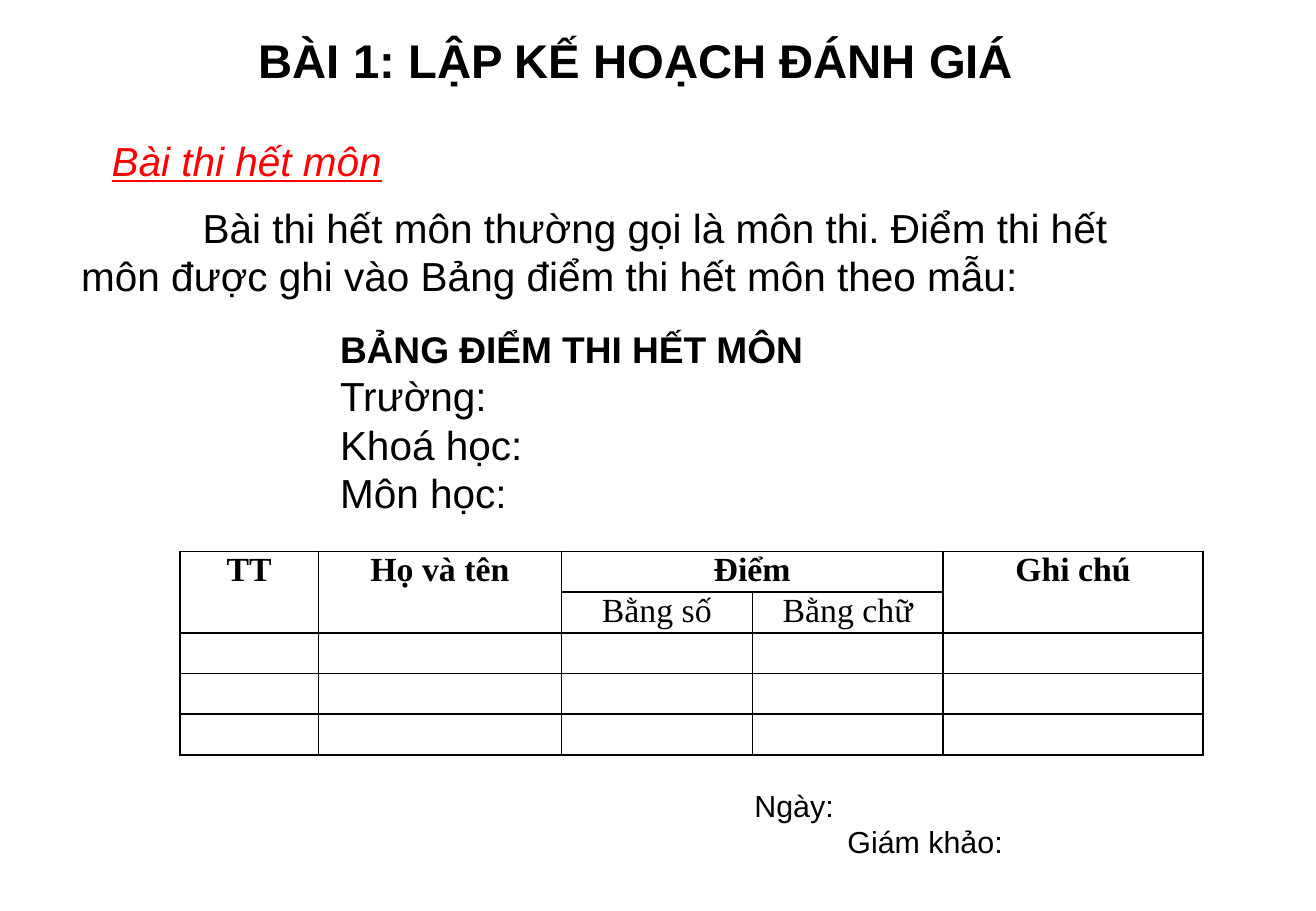
import pptx
import pptx.util
import pptx.dml.color
import pptx.enum.text
import pptx.oxml
import pptx.oxml.ns

BLACK = pptx.dml.color.RGBColor(0, 0, 0)
RED = pptx.dml.color.RGBColor(255, 0, 0)
LEFT = pptx.enum.text.PP_ALIGN.LEFT
MID = pptx.enum.text.PP_ALIGN.CENTER
TOP = pptx.enum.text.MSO_ANCHOR.TOP
Pt = pptx.util.Pt

deck = pptx.Presentation()
deck.slide_width = pptx.util.Inches(10.83)
deck.slide_height = pptx.util.Inches(7.5)
COL = deck.slide_width / 100
ROW = deck.slide_height / 100


def area(x, y, wide, high):
    """Turn hundredths of the slide into left, top, width and height."""
    return int(x * COL), int(y * ROW), int(wide * COL), int(high * ROW)


def write(frame, text, size=24, face="Arial", color=BLACK, bold=False,
          italic=False, under=False, align=LEFT, first=0, more=False):
    """Fill the frame, or add to it if more; first is the indent in columns."""
    frame.word_wrap = True
    para = frame.add_paragraph() if more else frame.paragraphs[0]
    para.alignment = align
    if first:
        para._p.get_or_add_pPr().set("indent", str(int(first * COL)))
    run = para.add_run()
    run.text = text
    font = run.font
    font.size, font.name, font.color.rgb = Pt(size), face, color
    font.bold, font.italic, font.underline = bold, italic, under


slide = deck.slides.add_slide(deck.slide_layouts[5])
shapes = slide.shapes

# Title
title = shapes.title
title.left, title.top, title.width, title.height = area(18.74, 2.8, 62, 7.6)
title.text_frame.vertical_anchor = TOP
write(title.text_frame, "BÀI 1: LẬP KẾ HOẠCH ĐÁNH GIÁ", size=28, bold=True)

# Topic and introduction
topic = shapes.add_textbox(*area(7.57, 14.27, 25, 6.67)).text_frame
write(topic, "Bài thi hết môn", color=RED, italic=True, under=True)

intro = shapes.add_textbox(*area(5.26, 21.6, 85.78, 12)).text_frame
write(intro, "Bài thi hết môn thường gọi là môn thi. Điểm thi hết "
      "môn được ghi vào Bảng điểm thi hết môn theo mẫu:", first=9.23)

# Form heading
form = shapes.add_textbox(*area(24.93, 35.2, 50.05, 22.93)).text_frame
write(form, "BẢNG ĐIỂM THI HẾT MÔN", size=22, bold=True)
for label in ("Trường:", "Khoá học:", "Môn học:"):
    write(form, label, more=True)

# Score table
WIDTHS = (10.53, 18.47, 14.5, 14.5, 19.76)
LINES, HIGH = 5, 4.47
table = shapes.add_table(LINES, len(WIDTHS), *area(
    13.67, 60.53, sum(WIDTHS), LINES * HIGH)).table
table.first_row = table.horz_banding = False
for column, wide in zip(table.columns, WIDTHS):
    column.width = int(wide * COL)
for row in table.rows:
    row.height = int(HIGH * ROW)

for cell in table.iter_cells():
    cell.margin_left = cell.margin_right = pptx.util.Inches(0.07)
    cell.margin_top = cell.margin_bottom = 0
    for side in ("lnL", "lnR", "lnT", "lnB"):
        cell._tc.get_or_add_tcPr().append(pptx.oxml.parse_xml(
            f'<a:{side} {pptx.oxml.ns.nsdecls("a")} w="{Pt(1)}"><a:solidFill>'
            f'<a:srgbClr val="{BLACK}"/></a:solidFill></a:{side}>'))
    cell.fill.background()

for top, left, end_row, end_col in ((0, 0, 1, 0), (0, 1, 1, 1),
                                    (0, 2, 0, 3), (0, 4, 1, 4)):
    table.cell(top, left).merge(table.cell(end_row, end_col))

HEADS = ((0, 0, "TT"), (0, 1, "Họ và tên"), (0, 2, "Điểm"),
         (0, 4, "Ghi chú"), (1, 2, "Bằng số"), (1, 3, "Bằng chữ"))
for line, place, head in HEADS:
    write(table.cell(line, place).text_frame, head, size=20,
          face="Times New Roman", bold=line == 0, align=MID)

# Date and examiner
sign = shapes.add_textbox(*area(56.42, 85.73, 42.94, 9.47)).text_frame
write(sign, "Ngày:", size=18)
write(sign, "Giám khảo:", size=18, first=7.07, more=True)

deck.save("out.pptx")
